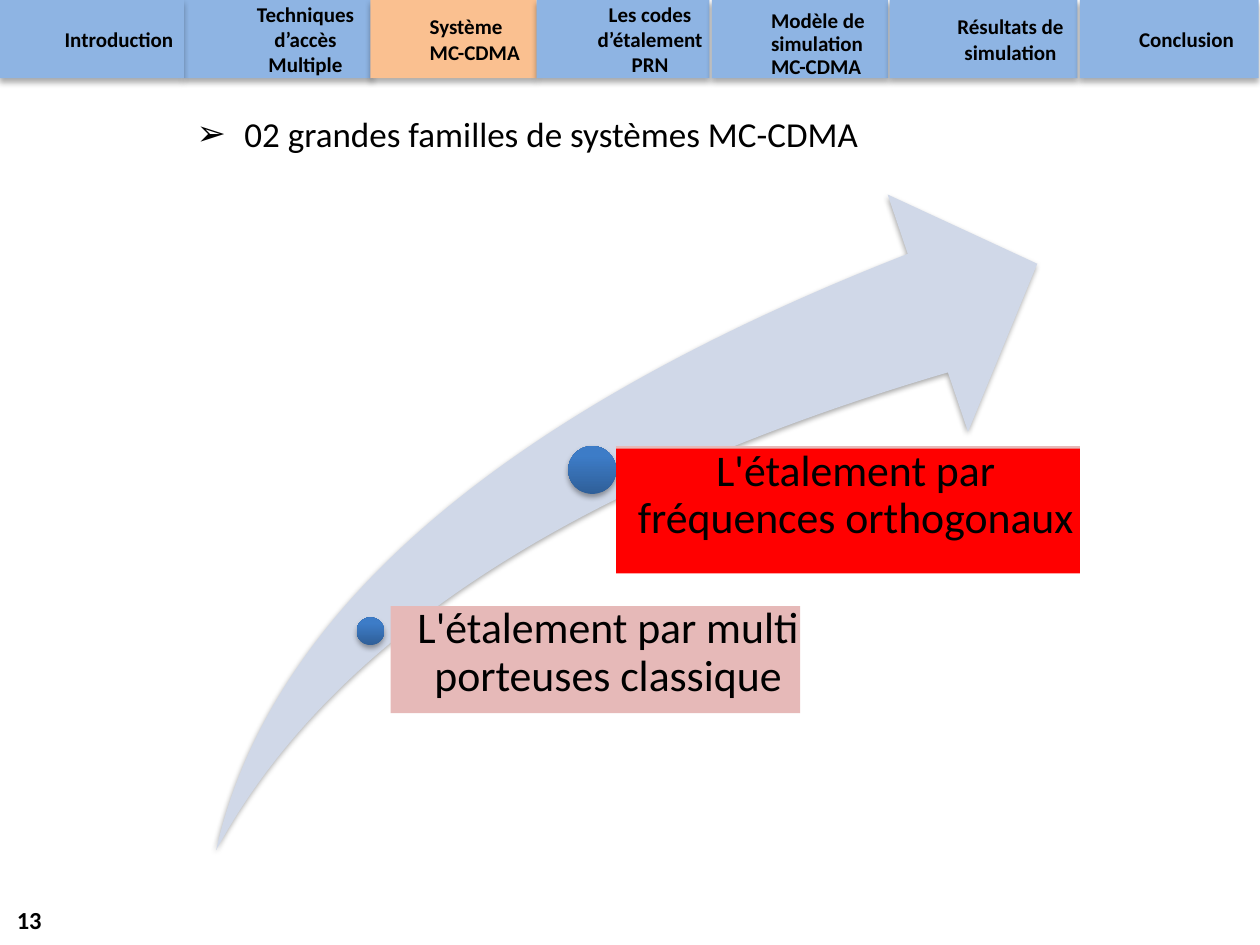
from dataclasses import dataclass

from lxml import etree
from pptx import Presentation
from pptx.dml.color import RGBColor
from pptx.enum.shapes import MSO_SHAPE
from pptx.enum.text import MSO_ANCHOR, MSO_AUTO_SIZE, PP_ALIGN
from pptx.oxml.ns import qn
from pptx.util import Inches, Pt

RECT, OVAL, SWOOSH = MSO_SHAPE.RECTANGLE, MSO_SHAPE.OVAL, MSO_SHAPE.SWOOSH_ARROW
LEFT, CENTER, RIGHT = PP_ALIGN.LEFT, PP_ALIGN.CENTER, PP_ALIGN.RIGHT
TOP, MIDDLE = MSO_ANCHOR.TOP, MSO_ANCHOR.MIDDLE
NO_FIT = MSO_AUTO_SIZE.NONE
WIDTH, HEIGHT = Inches(10), Inches(7.5)
COLUMNS, ROWS = 100, 75
TAB_ROWS = 6.2


@dataclass(frozen=True)
class Theme:
    """Colours and type sizes of the slide."""
    font: str = "Calibri"
    text: str = "000000"
    tab: str = "8EB4E3"
    current: str = "FAC090"
    arrow: str = "D0D8E8"
    dot_low: str = "2F5F99"
    dot_high: str = "3D7CC7"
    label: str = "E6B9B8"
    accent: str = "FF0000"
    tab_size: int = 12
    number_size: int = 14
    heading_size: int = 20
    label_size: int = 25


THEME = Theme()

TABS = [
    (14.6, 15.0, "Techniques d’accès Multiple", CENTER),
    (29.4, 13.2, "Système MC-CDMA", LEFT),
    (42.6, 13.7, "Les codes d’étalement PRN", CENTER),
    (56.5, 14.0, "Modèle de simulation MC-CDMA", LEFT),
    (70.6, 14.9, "Résultats de simulation", CENTER),
    (85.7, 14.2, "Conclusion", LEFT),
    (0, 14.6, "Introduction", CENTER),
]
CURRENT_TAB = "Système MC-CDMA"
LOW_TAB = "Modèle de simulation MC-CDMA"


def grid(left, top, width, height):
    """Turn columns and rows into slide lengths."""
    col, row = WIDTH / COLUMNS, HEIGHT / ROWS
    return int(left * col), int(top * row), int(width * col), int(height * row)


def add_shadow(sp, alpha, blur, distance):
    """Give a shape a soft shadow that falls straight down."""
    effects = sp._element.spPr.find(qn("a:effectLst"))
    shadow = etree.SubElement(effects, qn("a:outerShdw"), blurRad=str(Pt(blur)),
                              dist=str(Pt(distance)), dir="5400000", rotWithShape="0")
    color = etree.SubElement(shadow, qn("a:srgbClr"), val="000000")
    etree.SubElement(color, qn("a:alpha"), val=str(alpha * 1000))


def add_box(s, kind, box, color=None):
    """Add a flat preset shape without a line."""
    sp = s.shapes.add_shape(kind, *grid(*box))
    sp.shadow.inherit = False
    sp.line.fill.background()
    if color:
        sp.fill.solid()
        sp.fill.fore_color.rgb = RGBColor.from_string(color)
    return sp


def write(sp, text, size, align=LEFT, anchor=TOP, insets=None, bold=False, spacing=None):
    """Write one formatted paragraph and return it."""
    tf = sp.text_frame
    tf.word_wrap = True
    tf.auto_size = NO_FIT
    tf.vertical_anchor = anchor
    if insets:
        tf.margin_left, tf.margin_top, tf.margin_right, tf.margin_bottom = map(Inches, insets)
    p = tf.paragraphs[0]
    p.text = text
    p.alignment = align
    p.line_spacing = spacing
    p.font.name, p.font.size, p.font.bold = THEME.font, Pt(size), bold
    p.font.color.rgb = RGBColor.from_string(THEME.text)
    return p


def add_tab(s, left, width, text, align):
    """Add one section of the navigation bar."""
    color = THEME.current if text == CURRENT_TAB else THEME.tab
    sp = add_box(s, RECT, (left, 0, width, TAB_ROWS), color)
    add_shadow(sp, 32, 3.5, 2.2)
    low = text == LOW_TAB
    write(sp, text, THEME.tab_size, align, MIDDLE, (0.47, 0.13 if low else 0.04, 0.04, 0.04),
          True, 0.9 if low else None)


def add_heading(s):
    """Place the body placeholder as an arrow-bulleted heading."""
    title, body = s.placeholders
    title._element.getparent().remove(title._element)
    body.left, body.top, body.width, body.height = grid(14.6, 8.4, 72.2, 4.4)
    p = write(body, "02 grandes familles de systèmes MC-CDMA", THEME.heading_size)
    p.space_before = Pt(4)
    props = p._p.get_or_add_pPr()
    props.set("marL", str(Inches(0.38)))
    props.set("indent", str(-Inches(0.38)))
    bullet = etree.Element(qn("a:buChar"), char="➢")
    props.find(qn("a:defRPr")).addprevious(bullet)


def add_arrow(s):
    """Add the rising arrow."""
    sp = add_box(s, SWOOSH, (12.1, 20.6, 73.6, 39.5), THEME.arrow)
    sp.adjustments[0] = sp.adjustments[1] = 0.25
    sp.rotation = 347.7
    add_shadow(sp, 35, 3.1, 1.8)


def add_dot(s, left, top, size):
    """Add a shaded milestone on the arrow."""
    sp = add_box(s, OVAL, (left, top, size, size))
    sp.fill.gradient()
    sp.fill.gradient_angle = 90
    low, high = sp.fill.gradient_stops
    low.position, high.position = 0, 0.8
    low.color.rgb = RGBColor.from_string(THEME.dot_low)
    high.color.rgb = RGBColor.from_string(THEME.dot_high)
    add_shadow(sp, 35, 3.1, 1.8)


def add_label(s, box, text, color, indent):
    """Add a filled label beside a milestone."""
    sp = add_box(s, RECT, box, color)
    write(sp, text, THEME.label_size, CENTER, insets=(indent, 0, 0, 0), spacing=0.9)


def add_number(s, text):
    """Add the slide number in the bottom corner."""
    sp = s.shapes.add_textbox(*grid(0, 71, 4.3, 4))
    write(sp, text, THEME.number_size, RIGHT, MIDDLE, bold=True)


def main():
    """Build and save the slide."""
    prs = Presentation()
    prs.slide_width, prs.slide_height = WIDTH, HEIGHT
    s = prs.slides.add_slide(prs.slide_layouts[1])
    add_number(s, "13")
    for tab in TABS:
        add_tab(s, *tab)
    add_heading(s)
    add_arrow(s)
    add_dot(s, 45.1, 35.4, 3.8)
    add_dot(s, 28.3, 49, 2.2)
    add_label(s, (31, 48.1, 32.5, 8.5), "L'étalement par multi porteuses classique",
              THEME.label, 0.2)
    add_box(s, RECT, (48.9, 35.4, 36.8, 9.9), THEME.label)
    add_label(s, (48.9, 35.6, 36.8, 9.9), "L'étalement par fréquences orthogonaux",
              THEME.accent, 0.12)
    prs.save("out.pptx")


if __name__ == "__main__":
    main()
